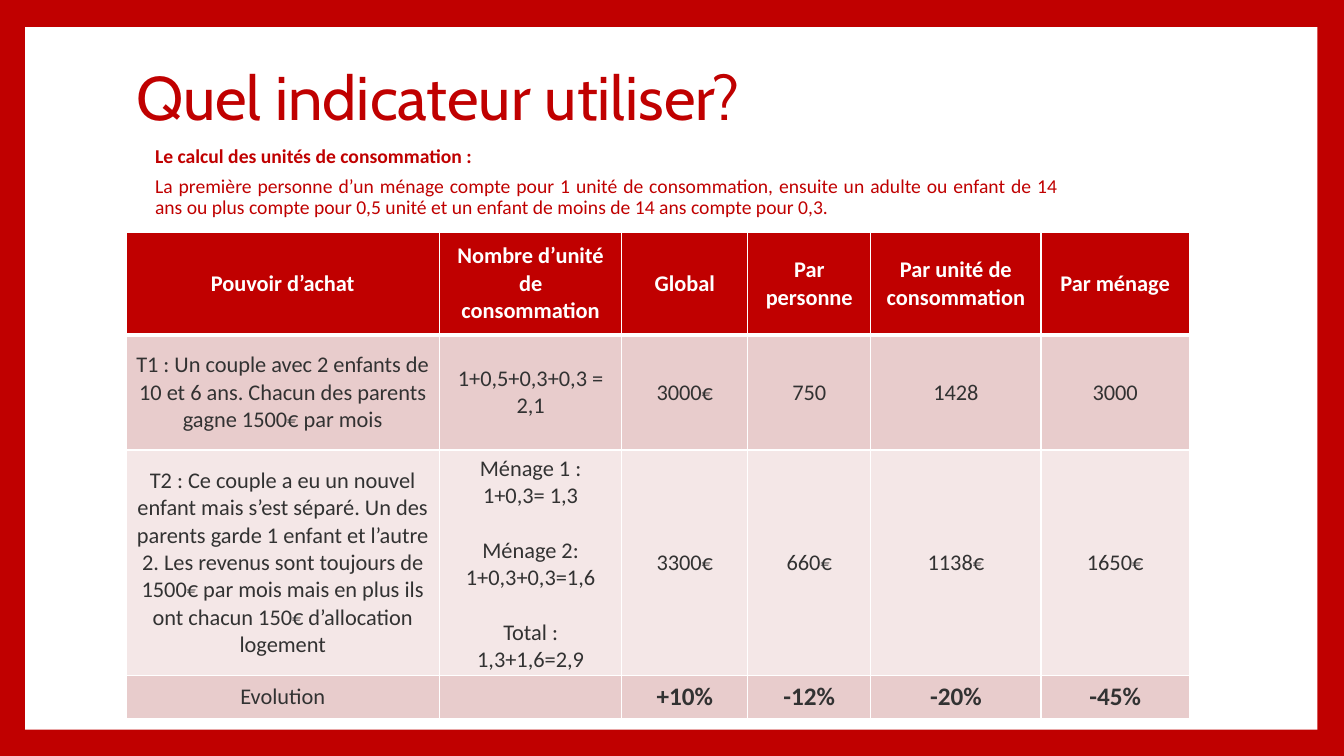
from dataclasses import dataclass

from lxml.etree import SubElement
from pptx import Presentation
from pptx.dml.color import RGBColor
from pptx.enum.shapes import MSO_SHAPE
from pptx.enum.text import MSO_ANCHOR, PP_ALIGN
from pptx.oxml.ns import qn
from pptx.util import Pt


@dataclass(frozen=True)
class Theme:
    """Colours, fonts and type sizes of the slide."""
    red: str = "C00000"
    white: str = "FFFFFF"
    dark: str = "323232"
    bands: tuple = ("E8CCCC", "F4E7E7")
    title_font: str = "Cabin"
    body_font: str = "Calibri"
    title_size: int = 44
    rule_size: int = 14
    cell_size: int = 16
    change_size: int = 18


THEME = Theme()
COLUMN_WIDTHS = (223.9, 130.3, 90, 87.8, 121.7, 105.8)
ROW_HEIGHTS = (73.4, 82.1, 160.6, 30.2)
RULE = (
    "Le calcul des unités de consommation :",
    "La première personne d’un ménage compte pour 1 unité de consommation, "
    "ensuite un adulte ou enfant de 14 ans ou plus compte pour 0,5 unité "
    "et un enfant de moins de 14 ans compte pour 0,3.",
)
ROWS = (
    ("Pouvoir d’achat", "Nombre d’unité de consommation", "Global",
     "Par personne", "Par unité de consommation", "Par ménage"),
    ("T1 : Un couple avec 2 enfants de 10 et 6 ans. Chacun des parents "
     "gagne 1500€ par mois",
     "1+0,5+0,3+0,3 = 2,1", "3000€", "750", "1428", "3000"),
    ("T2 : Ce couple a eu un nouvel enfant mais s’est séparé. Un des parents "
     "garde 1 enfant et l’autre 2. Les revenus sont toujours de 1500€ par mois "
     "mais en plus ils ont chacun 150€ d’allocation logement",
     "Ménage 1 : 1+0,3= 1,3\nMénage 2: 1+0,3+0,3=1,6\nTotal : 1,3+1,6=2,9",
     "3300€", "660€", "1138€", "1650€"),
    ("Evolution", "", "+10%", "-12%", "-20%", "-45%"),
)


def set_font(para, name, size, color, bold=False):
    """Format a whole paragraph."""
    para.font.name = name
    para.font.size = Pt(size)
    para.font.bold = bold
    para.font.color.rgb = RGBColor.from_string(color)


def paint(fill, color):
    """Give a fill one solid colour."""
    fill.solid()
    fill.fore_color.rgb = RGBColor.from_string(color)


def add_panel(page):
    """Frame the page in red around a white panel behind everything."""
    paint(page.background.fill, THEME.red)
    panel = page.shapes.add_shape(
        MSO_SHAPE.RECTANGLE, Pt(18), Pt(19.4), Pt(923), Pt(501.8))
    panel.shadow.inherit = False
    paint(panel.fill, THEME.white)
    panel.line.fill.background()
    page.shapes._spTree.insert(2, panel._element)


def set_title(page, text):
    """Place and format the title placeholder."""
    title = page.shapes.title
    title.left, title.top, title.width, title.height = (
        Pt(90), Pt(18.7), Pt(777.6), Pt(106.6))
    title.text_frame.text = text
    title.text_frame.vertical_anchor = MSO_ANCHOR.MIDDLE
    para = title.text_frame.paragraphs[0]
    para.alignment = PP_ALIGN.LEFT
    para.line_spacing = 0.9
    set_font(para, THEME.title_font, THEME.title_size, THEME.red)


def add_rule(page):
    """Add the counting rule, with its heading in bold."""
    box = page.shapes.add_textbox(Pt(103.7), Pt(101.5), Pt(659.5), Pt(64))
    frame = box.text_frame
    frame.word_wrap = True
    frame.text = "\n".join(RULE)
    for index, para in enumerate(frame.paragraphs):
        para.alignment = PP_ALIGN.JUSTIFY
        para.line_spacing = 0.9
        para.space_before = Pt(6 if index else 0)
        set_font(para, THEME.body_font, THEME.rule_size, THEME.red, index == 0)


def set_borders(cell, bottom_width):
    """Draw white cell borders, ahead of the fill in the cell properties."""
    properties = cell._tc.get_or_add_tcPr()
    widths = {"a:lnL": 1, "a:lnR": 1, "a:lnT": 1, "a:lnB": bottom_width}
    for index, (tag, width) in enumerate(widths.items()):
        line = SubElement(properties, qn(tag), w=str(Pt(width)))
        solid = SubElement(line, qn("a:solidFill"))
        SubElement(solid, qn("a:srgbClr"), val=THEME.white)
        properties.insert(index, line)


def fill_cell(cell, text, row, column):
    """Write and format one cell according to its place in the table."""
    header = row == 0
    change = row == len(ROWS) - 1 and column > 0
    paint(cell.fill, THEME.red if header else THEME.bands[(row - 1) % 2])
    set_borders(cell, 3 if header else 1)
    cell.vertical_anchor = MSO_ANCHOR.MIDDLE
    cell.text = text
    for index, para in enumerate(cell.text_frame.paragraphs):
        para.alignment = PP_ALIGN.CENTER
        para.space_before = Pt(19.5 if index else 0)
        set_font(para, THEME.body_font,
                 THEME.change_size if change else THEME.cell_size,
                 THEME.white if header else THEME.dark, header or change)


def add_comparison(page):
    """Add the table comparing the indicators."""
    table = page.shapes.add_table(
        len(ROWS), len(COLUMN_WIDTHS), Pt(90), Pt(165.9),
        Pt(sum(COLUMN_WIDTHS)), Pt(sum(ROW_HEIGHTS))).table
    for column, width in zip(table.columns, COLUMN_WIDTHS):
        column.width = Pt(width)
    for row, height in zip(table.rows, ROW_HEIGHTS):
        row.height = Pt(height)
    for row, texts in enumerate(ROWS):
        for column, text in enumerate(texts):
            fill_cell(table.cell(row, column), text, row, column)


def main():
    """Build the slide and save it."""
    deck = Presentation()
    deck.slide_width, deck.slide_height = Pt(960), Pt(540)
    page = deck.slides.add_slide(deck.slide_layouts[5])
    add_panel(page)
    set_title(page, "Quel indicateur utiliser?")
    add_rule(page)
    add_comparison(page)
    deck.save("out.pptx")


if __name__ == "__main__":
    main()
